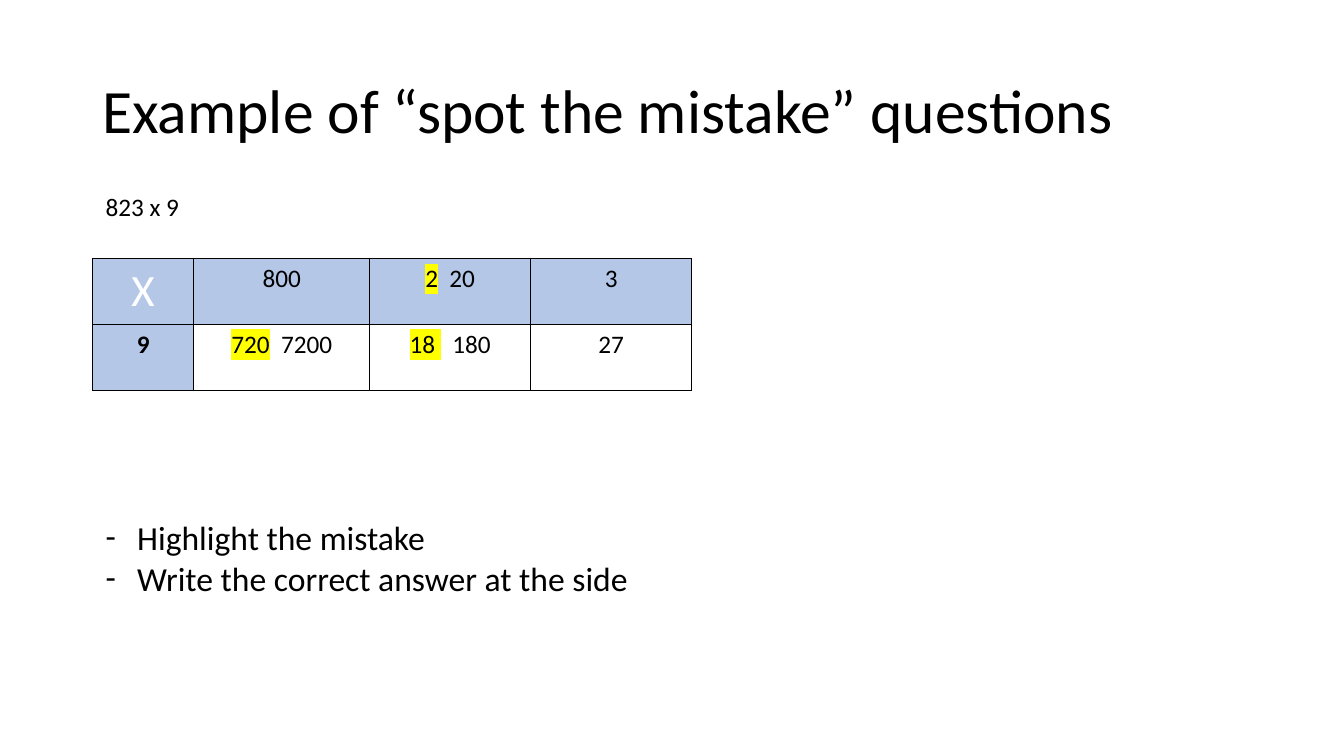
from dataclasses import dataclass

from lxml import etree
from pptx import Presentation
from pptx.dml.color import RGBColor
from pptx.enum.text import MSO_ANCHOR, PP_ALIGN
from pptx.oxml.ns import qn
from pptx.slide import Slide
from pptx.table import _Cell
from pptx.text.text import TextFrame, _Paragraph
from pptx.util import Pt

CENTER = PP_ALIGN.CENTER
MIDDLE, TOP = MSO_ANCHOR.MIDDLE, MSO_ANCHOR.TOP
BLACK = RGBColor(0x00, 0x00, 0x00)
WHITE = RGBColor(0xFF, 0xFF, 0xFF)
HEADER_BLUE = RGBColor(0xB4, 0xC7, 0xE7)
MISTAKE_YELLOW = RGBColor(0xFF, 0xFF, 0x00)
FONT = "Calibri"
DASH_INDENT = 22.5


@dataclass(frozen=True)
class Piece:
    text: str
    size: float = 18
    color: RGBColor = BLACK
    bold: bool = False
    mistake: bool = False


@dataclass(frozen=True)
class Block:
    left: float
    top: float
    width: float
    height: float
    lines: tuple[Piece, ...]
    anchor: MSO_ANCHOR = TOP
    spacing: float = 1.0
    dashed: bool = False


BLOCKS = (
    Block(66, 28.8, 828, 104.4,
          (Piece("Example of “spot the mistake” questions", 44),),
          anchor=MIDDLE, spacing=0.9),
    Block(68.4, 133.2, 213.8, 29.1, (Piece("823 x 9"),)),
    Block(68.4, 365.8, 411.8, 65.4,
          (Piece("Highlight the mistake", 24),
           Piece("Write the correct answer at the side", 24)),
          dashed=True),
)

GRID_LEFT, GRID_TOP = 66, 184.6
COLUMN_WIDTHS = (72.5, 125.5, 115.2, 114.8)
ROW_HEIGHT = 47.1
GRID = (
    ((Piece("X", 32, WHITE),),
     (Piece("800"),),
     (Piece("2", mistake=True), Piece("  20")),
     (Piece("3"),)),
    ((Piece("9", bold=True),),
     (Piece("720", mistake=True), Piece("  7200")),
     (Piece("18 ", mistake=True), Piece("  180")),
     (Piece("27"),)),
)


def add_piece(paragraph: _Paragraph, piece: Piece) -> None:
    run = paragraph.add_run()
    run.text = piece.text
    run.font.size = Pt(piece.size)
    run.font.bold = piece.bold
    run.font.name = FONT
    run.font.color.rgb = piece.color
    if piece.mistake:
        highlight = etree.Element(qn("a:highlight"))
        etree.SubElement(highlight, qn("a:srgbClr"), val=str(MISTAKE_YELLOW))
        # The schema places the highlight directly after the fill
        run._r.get_or_add_rPr().find(qn("a:solidFill")).addnext(highlight)


def add_dash(paragraph: _Paragraph) -> None:
    properties = paragraph._p.get_or_add_pPr()
    properties.set("marL", str(Pt(DASH_INDENT)))
    properties.set("indent", str(-Pt(DASH_INDENT)))
    etree.SubElement(properties, qn("a:buFont"), typeface=FONT)
    etree.SubElement(properties, qn("a:buChar"), char="-")


def fill_lines(frame: TextFrame, block: Block) -> None:
    for index, line in enumerate(block.lines):
        paragraph = frame.add_paragraph() if index else frame.paragraphs[0]
        paragraph.line_spacing = block.spacing
        if block.dashed:
            add_dash(paragraph)
        add_piece(paragraph, line)


def add_block(slide: Slide, block: Block) -> None:
    box = slide.shapes.add_textbox(
        Pt(block.left), Pt(block.top), Pt(block.width), Pt(block.height))
    frame = box.text_frame
    frame.word_wrap = True
    frame.vertical_anchor = block.anchor
    fill_lines(frame, block)


def add_borders(cell: _Cell) -> None:
    properties = cell._tc.get_or_add_tcPr()
    for position, side in enumerate(("a:lnL", "a:lnR", "a:lnT", "a:lnB")):
        line = etree.Element(qn(side), w=str(Pt(1)))
        color = etree.SubElement(line, qn("a:solidFill"))
        etree.SubElement(color, qn("a:srgbClr"), val=str(BLACK))
        properties.insert(position, line)


def add_grid(slide: Slide) -> None:
    grid = slide.shapes.add_table(
        len(GRID), len(COLUMN_WIDTHS), Pt(GRID_LEFT), Pt(GRID_TOP),
        Pt(sum(COLUMN_WIDTHS)), Pt(ROW_HEIGHT * len(GRID))).table
    grid.first_row = False
    grid.horz_banding = False
    for column, width in zip(grid.columns, COLUMN_WIDTHS):
        column.width = Pt(width)
    for row_index, row in enumerate(GRID):
        grid.rows[row_index].height = Pt(ROW_HEIGHT)
        for column_index, pieces in enumerate(row):
            cell = grid.cell(row_index, column_index)
            # First row and first column hold the factors
            if row_index == 0 or column_index == 0:
                cell.fill.solid()
                cell.fill.fore_color.rgb = HEADER_BLUE
            else:
                cell.fill.background()
            add_borders(cell)
            paragraph = cell.text_frame.paragraphs[0]
            paragraph.alignment = CENTER
            for piece in pieces:
                add_piece(paragraph, piece)


def main() -> None:
    deck = Presentation()
    deck.slide_width, deck.slide_height = Pt(960), Pt(540)
    slide = deck.slides.add_slide(deck.slide_layouts[6])

    # Title, sum and instructions
    for block in BLOCKS:
        add_block(slide, block)

    # Multiplication grid
    add_grid(slide)

    deck.save("out.pptx")


if __name__ == "__main__":
    main()
